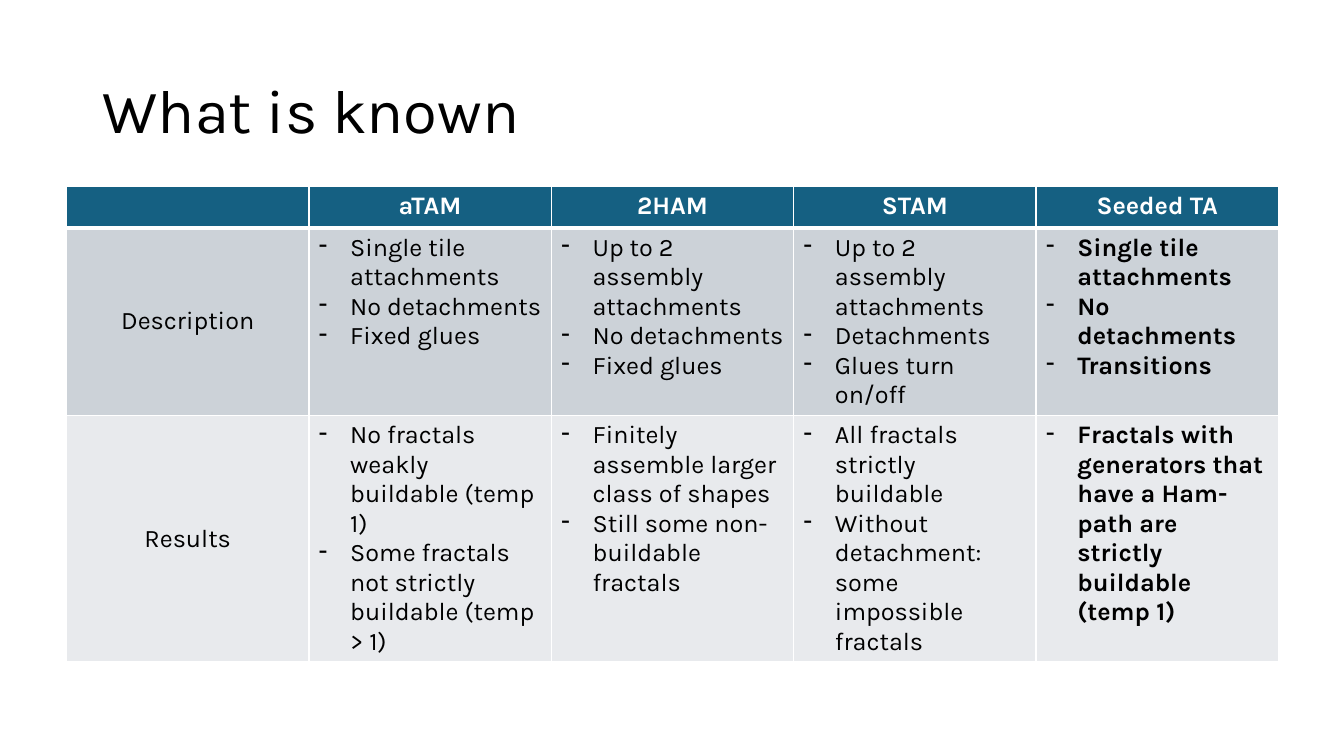
"""Build the slide that compares known results for four tile assembly models."""
from dataclasses import dataclass

from lxml.etree import SubElement
from pptx import Presentation
from pptx.dml.color import RGBColor
from pptx.enum.text import MSO_ANCHOR, PP_ALIGN
from pptx.oxml import parse_xml
from pptx.oxml.ns import nsdecls, qn
from pptx.util import Inches, Pt


@dataclass(frozen=True)
class Theme:
    font: str = "Karla"
    title_size: int = 44
    table_size: int = 18
    ink: str = "000000"
    white: str = "FFFFFF"
    header: str = "156082"
    bands: tuple = ("CCD2D8", "E8EAED")
    rule: int = 1
    header_rule: int = 3


MODELS = ["", "aTAM", "2HAM", "STAM", "Seeded TA"]
FINDINGS = {
    "Description": [
        ["Single tile attachments", "No detachments", "Fixed glues"],
        ["Up to 2 assembly attachments", "No detachments", "Fixed glues"],
        ["Up to 2 assembly attachments", "Detachments", "Glues turn on/off"],
        ["Single tile attachments", "No detachments", "Transitions"],
    ],
    "Results": [
        ["No fractals weakly buildable (temp 1)",
         "Some fractals not strictly buildable (temp > 1)"],
        ["Finitely assemble larger class of shapes",
         "Still some non-buildable fractals"],
        ["All fractals strictly buildable",
         "Without detachment: some impossible fractals"],
        ["Fractals with generators that have a Ham-path are strictly "
         "buildable (temp 1)"],
    ],
}


def assign(target, values):
    for name, value in values.items():
        setattr(target, name, value)


class SlideBuilder:
    def __init__(self, presentation, theme):
        self.theme = theme
        self.slide = presentation.slides.add_slide(presentation.slide_layouts[5])

    def style_font(self, font, size, color, bold=False):
        assign(font, {"name": self.theme.font, "size": Pt(size), "bold": bold})
        font.color.rgb = RGBColor.from_string(color)

    def title(self, wording, left, top, width, height):
        heading = self.slide.shapes.title
        assign(heading, {"left": Inches(left), "top": Inches(top),
                         "width": Inches(width), "height": Inches(height)})
        frame = heading.text_frame
        assign(frame, {"text": wording, "word_wrap": True,
                       "vertical_anchor": MSO_ANCHOR.MIDDLE})
        line = frame.paragraphs[0]
        assign(line, {"alignment": PP_ALIGN.LEFT, "line_spacing": 0.9})
        self.style_font(line.runs[0].font, self.theme.title_size, self.theme.ink)

    def borders(self, cell, top, bottom):
        properties = cell._tc.get_or_add_tcPr()
        widths = {"lnL": self.theme.rule, "lnR": self.theme.rule,
                  "lnT": top, "lnB": bottom}
        for position, (side, width) in enumerate(widths.items()):
            properties.insert(position, parse_xml(
                f'<a:{side} {nsdecls("a")} w="{Pt(width)}"><a:solidFill>'
                f'<a:srgbClr val="{self.theme.white}"/></a:solidFill></a:{side}>'))

    def cell(self, cell, lines, fill, color, bold=False, bulleted=False,
             anchor=MSO_ANCHOR.TOP, top=1, bottom=1):
        cell.fill.solid()
        cell.fill.fore_color.rgb = RGBColor.from_string(fill)
        cell.vertical_anchor = anchor
        self.borders(cell, top, bottom)
        cell.text = "\n".join(lines)
        for paragraph in cell.text_frame.paragraphs:
            paragraph.alignment = PP_ALIGN.LEFT if bulleted else PP_ALIGN.CENTER
            self.style_font(paragraph.font, self.theme.table_size, color, bold)
            for run in paragraph.runs:
                self.style_font(run.font, self.theme.table_size, color, bold)
            if bulleted:
                self.dash(paragraph)

    def dash(self, paragraph):
        properties = paragraph._p.get_or_add_pPr()
        indent = Inches(0.31)
        properties.set("marL", str(indent))
        properties.set("indent", str(-indent))
        bullet = SubElement(properties, qn("a:buChar"))
        bullet.set("char", "-")
        properties.insert(0, bullet)

    def comparison(self, models, findings, left, top, width, height, row_height):
        theme = self.theme
        holder = self.slide.shapes.add_table(
            len(findings) + 1, len(models), Inches(left), Inches(top),
            Inches(width), Inches(height))
        grid = holder.table
        for row in grid.rows:
            row.height = Inches(row_height)
        holder.height = Inches(height)
        for column, model in enumerate(models):
            self.cell(grid.cell(0, column), [model], theme.header, theme.white,
                      bold=True, bottom=theme.header_rule)
        for row, (topic, entries) in enumerate(findings.items(), 1):
            band = theme.bands[row - 1]
            upper = theme.header_rule if row == 1 else theme.rule
            self.cell(grid.cell(row, 0), [topic], band, theme.ink,
                      anchor=MSO_ANCHOR.MIDDLE, top=upper)
            for column, points in enumerate(entries, 1):
                self.cell(grid.cell(row, column), points, band, theme.ink,
                          bold=column == len(entries), bulleted=True, top=upper)


def main():
    presentation = Presentation()
    assign(presentation, {"slide_width": Inches(13.33),
                          "slide_height": Inches(7.5)})
    builder = SlideBuilder(presentation, Theme())
    builder.title("What is known", 0.92, 0.4, 11.5, 1.45)
    builder.comparison(MODELS, FINDINGS, 0.66, 1.85, 12.02, 4.21, 0.41)
    presentation.save("out.pptx")


if __name__ == "__main__":
    main()
